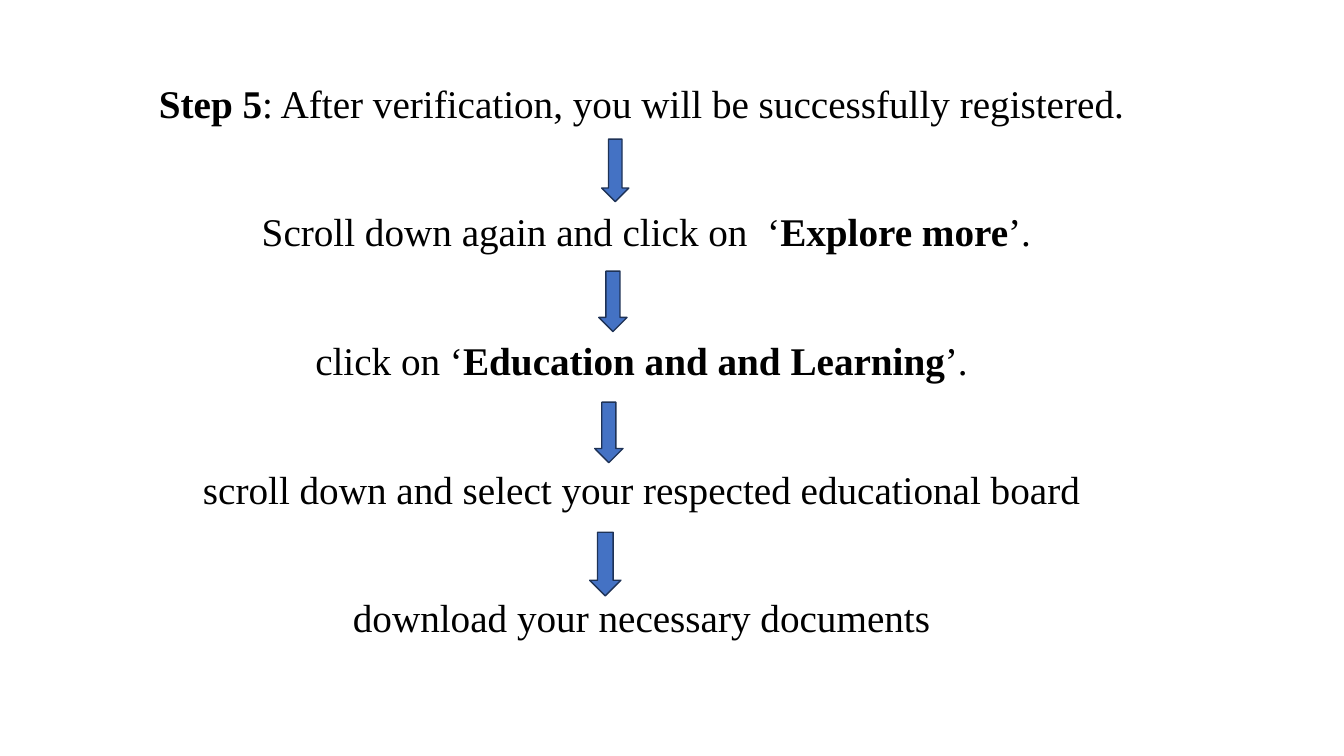
import pptx
import pptx.util
import pptx.dml.color
import pptx.enum.shapes
import pptx.enum.text

Pt = pptx.util.Pt
COLORS = {"text": "000000", "arrow": "4472C4", "outline": "1E3256"}


def color(name):
    return pptx.dml.color.RGBColor.from_string(COLORS[name])


deck = pptx.Presentation()
deck.slide_width = Pt(960)
deck.slide_height = Pt(540)
page = deck.slides.add_slide(deck.slide_layouts[5])

steps = [
    [("Step 5", True), (": After verification, you will be successfully registered.", False)],
    [(" Scroll down again and click on  ‘", False), ("Explore more", True), ("’.", False)],
    [("click on ‘", False), ("Education and and Learning", True), ("’.", False)],
    [("scroll down and select your respected educational board", False)],
    [("download your necessary documents", False)],
]

title = page.shapes.title
title.left, title.top = Pt(55.4), Pt(69.8)
title.width, title.height = Pt(805.7), Pt(378.7)
frame = title.text_frame
frame.word_wrap = True
frame.auto_size = pptx.enum.text.MSO_AUTO_SIZE.NONE
frame.vertical_anchor = pptx.enum.text.MSO_ANCHOR.MIDDLE

for index, step in enumerate(steps):
    para = frame.add_paragraph() if index else frame.paragraphs[0]
    para.alignment = pptx.enum.text.PP_ALIGN.CENTER
    para.line_spacing = 0.9
    para.space_before = Pt(61.7 if index else 0)
    para.font.name = "Times New Roman"
    para.font.size = Pt(28)
    para.font.color.rgb = color("text")
    for text, bold in step:
        span = para.add_run()
        span.text = text
        span.font.bold = bold

arrows = [
    (429.8, 99.4, 19.4, 44.6),
    (427.7, 193.7, 20.2, 43.2),
    (424.8, 287.3, 20.2, 43.2),
    (421.2, 380.2, 22.3, 45.4),
]
for bounds in arrows:
    arrow = page.shapes.add_shape(
        pptx.enum.shapes.MSO_SHAPE.DOWN_ARROW, *[Pt(length) for length in bounds]
    )
    arrow.shadow.inherit = False
    arrow.fill.solid()
    arrow.fill.fore_color.rgb = color("arrow")
    arrow.line.color.rgb = color("outline")
    arrow.line.width = Pt(1)

deck.save("out.pptx")
